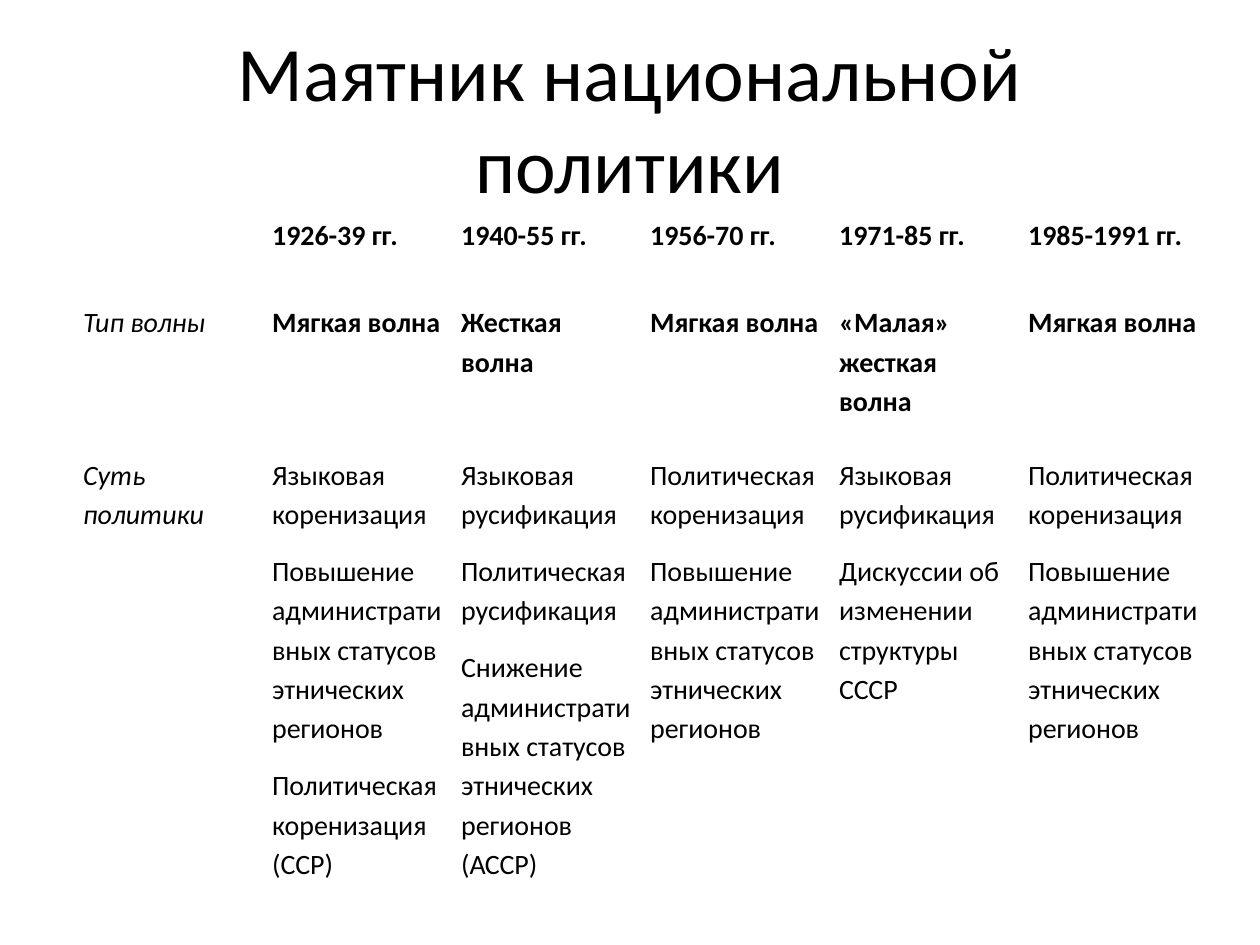
from dataclasses import dataclass

from pptx import Presentation
from pptx.dml.color import RGBColor
from pptx.enum.text import MSO_ANCHOR, MSO_AUTO_SIZE, PP_ALIGN
from pptx.util import Inches, Pt

TITLE = "Маятник национальной политики"
STATUS = "Повышение административных статусов этнических регионов"
PERIODS = ["1926-39 гг.", "1940-55 гг.", "1956-70 гг.", "1971-85 гг.", "1985-1991 гг."]
WAVES = ["Мягкая волна", "Жесткая волна", "Мягкая волна", "«Малая» жесткая волна", "Мягкая волна"]
POLICIES = [
    ["Языковая коренизация", STATUS, "Политическая коренизация (ССР)"],
    ["Языковая русификация", "Политическая русификация",
     "Снижение административных статусов этнических регионов (АССР)"],
    ["Политическая коренизация", STATUS],
    ["Языковая русификация", "Дискуссии об изменении структуры СССР"],
    ["Политическая коренизация", STATUS],
]
ROWS = [
    {"label": "", "cells": [[period] for period in PERIODS], "height": 0.69, "bold": True},
    {"label": "Тип волны", "cells": [[wave] for wave in WAVES], "height": 1.21, "bold": True},
    {"label": "Суть политики", "cells": POLICIES, "height": 3.34, "bold": False},
]


@dataclass(frozen=True)
class Theme:
    font: str = "Calibri"
    ink: RGBColor = RGBColor(0, 0, 0)
    paper: RGBColor = RGBColor(255, 255, 255)
    title_size: int = 44
    table_size: int = 16


THEME = Theme()


def write_text(frame, paragraphs, size, bold=False, italic=False,
               align=PP_ALIGN.LEFT, line_spacing=None, space_after=None):
    for index, text in enumerate(paragraphs):
        paragraph = frame.add_paragraph() if index else frame.paragraphs[0]
        paragraph.alignment = align
        paragraph.line_spacing = line_spacing
        paragraph.space_after = space_after
        paragraph.font.size = Pt(size)
        if not text:
            continue
        run = paragraph.add_run()
        run.text = text
        font = run.font
        font.name, font.size = THEME.font, Pt(size)
        font.bold, font.italic = bold, italic
        font.color.rgb = THEME.ink


def add_title(slide):
    title = slide.shapes.title
    title.left, title.top = Inches(0.5), Inches(0.3)
    title.width, title.height = Inches(9), Inches(1.25)
    frame = title.text_frame
    frame.word_wrap = True
    frame.auto_size = MSO_AUTO_SIZE.NONE
    frame.vertical_anchor = MSO_ANCHOR.MIDDLE
    write_text(frame, [TITLE], THEME.title_size, align=PP_ALIGN.CENTER)


def fill_cell(cell, paragraphs, **style):
    cell.fill.background()
    cell.margin_left = cell.margin_right = Inches(0.07)
    cell.margin_top = cell.margin_bottom = 0
    cell.vertical_anchor = MSO_ANCHOR.TOP
    write_text(cell.text_frame, paragraphs, THEME.table_size,
               line_spacing=1.15, space_after=Pt(10), **style)


def add_policy_table(slide):
    height = sum(row["height"] for row in ROWS)
    table = slide.shapes.add_table(len(ROWS), len(PERIODS) + 1, Inches(0.59), Inches(1.7),
                                   Inches(9), Inches(height)).table
    table.first_row = table.horz_banding = False
    for row_index, row in enumerate(ROWS):
        table.rows[row_index].height = Inches(row["height"])
        fill_cell(table.cell(row_index, 0), [row["label"]], italic=True)
        for column, paragraphs in enumerate(row["cells"], start=1):
            fill_cell(table.cell(row_index, column), paragraphs, bold=row["bold"])


def main():
    presentation = Presentation()
    presentation.slide_width, presentation.slide_height = Inches(10), Inches(7.5)
    slide = presentation.slides.add_slide(presentation.slide_layouts[5])
    slide.background.fill.solid()
    slide.background.fill.fore_color.rgb = THEME.paper
    add_title(slide)
    add_policy_table(slide)
    presentation.save("out.pptx")


if __name__ == "__main__":
    main()
